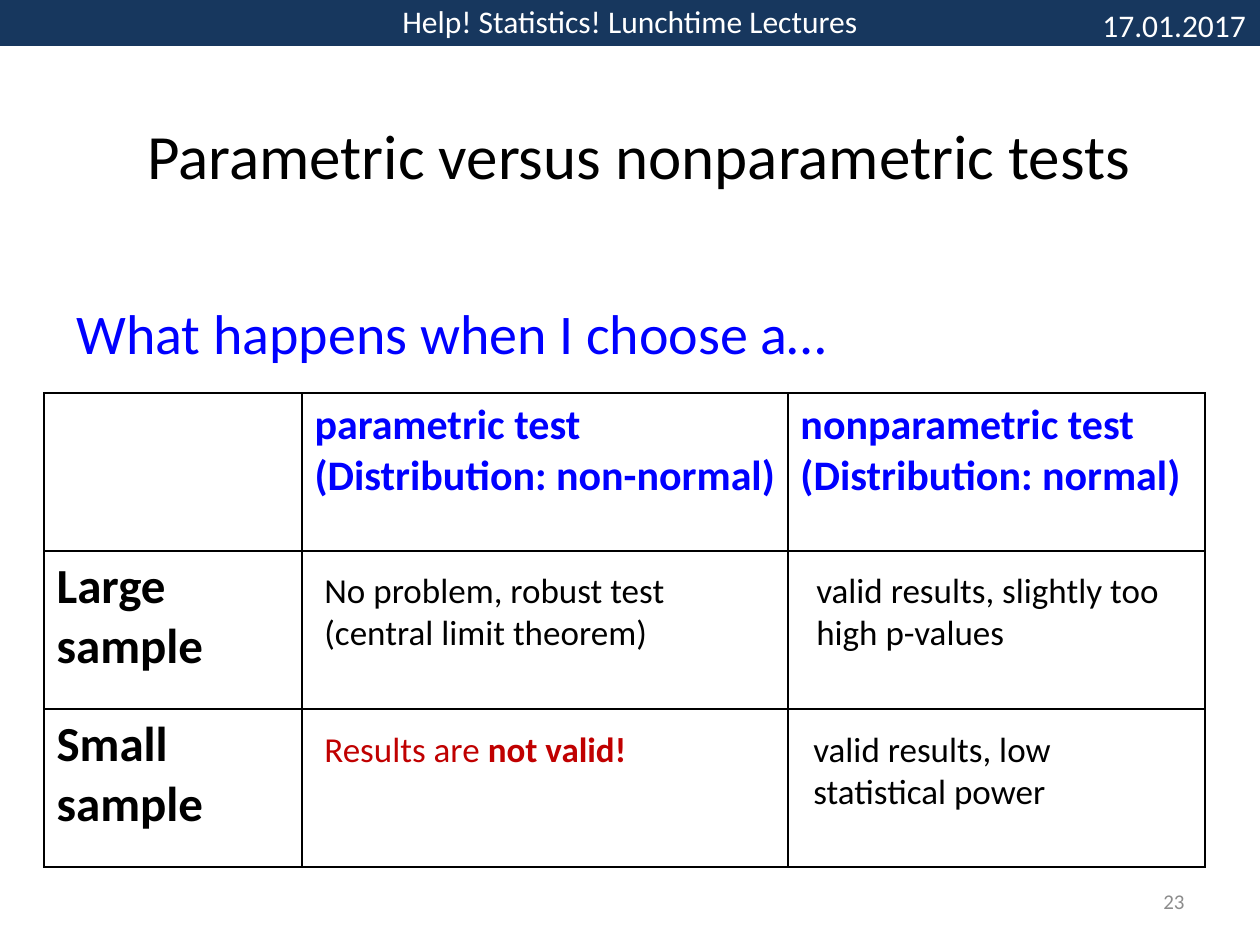
from lxml.etree import SubElement
from pptx import Presentation
from pptx.dml.color import RGBColor
from pptx.enum.shapes import MSO_SHAPE
from pptx.enum.text import MSO_ANCHOR, PP_ALIGN
from pptx.oxml.ns import qn
from pptx.util import Emu, Pt

PX = 914400 // 126
FONT = "Calibri"
BLUE, BLACK, WHITE, RED = "0000FF", "000000", "FFFFFF", "C00000"

TITLE = "Parametric versus nonparametric tests"
HEADER = "Help! Statistics! Lunchtime Lectures"
DATE = "17.01.2017"
QUESTION = "What happens when I choose a…"
PAGE = "23"

COLUMNS = [
    "parametric test (Distribution: non-normal)",
    "nonparametric test (Distribution: normal)",
]
SAMPLES = ["Large sample", "Small sample"]
COL_WIDTHS = [258, 486, 417]
ROW_HEIGHT = 158
TABLE_LEFT, TABLE_TOP = 44, 393

# runs as (text, bold), colour, box
OUTCOMES = [
    ([("No problem, robust test (central limit theorem)", False)], BLACK, (312, 562, 446, 97)),
    ([("valid results, slightly too high p-values", False)], BLACK, (804, 562, 382, 97)),
    ([("valid results, low statistical power", False)], BLACK, (801, 721, 382, 97)),
    ([("Results are ", False), ("not valid!", True)], RED, (312, 721, 446, 55)),
]


def px(*values):
    return [Emu(v * PX) for v in values]


def rgb(color):
    return RGBColor.from_string(color)


def write(tf, runs, size, color, align=PP_ALIGN.LEFT, anchor=MSO_ANCHOR.TOP):
    tf.word_wrap = True
    tf.vertical_anchor = anchor
    p = tf.paragraphs[0]
    p.alignment = align
    style_font(p, size, color)
    for text, bold in runs:
        r = p.add_run()
        r.text = text
        if bold:
            r.font.bold = True


def style_font(p, size, color):
    p.font.name, p.font.size = FONT, Pt(size)
    p.font.color.rgb = rgb(color)


def add_text(slide, runs, box, size, color, **layout):
    sp = slide.shapes.add_textbox(*px(*box))
    write(sp.text_frame, runs, size, color, **layout)
    return sp


def add_bar(slide, text, box, fill, size, color, **layout):
    sp = slide.shapes.add_shape(MSO_SHAPE.RECTANGLE, *px(*box))
    sp.shadow.inherit = False
    sp.fill.solid()
    sp.fill.fore_color.rgb = rgb(fill)
    sp.line.fill.background()
    write(sp.text_frame, [(text, False)], size, color, **layout)


def add_borders(cell):
    tc_pr = cell._tc.get_or_add_tcPr()
    for i, side in enumerate(("lnL", "lnR", "lnT", "lnB")):
        ln = tc_pr.makeelement(qn(f"a:{side}"), {"w": str(Pt(1))})
        fill = SubElement(ln, qn("a:solidFill"))
        SubElement(fill, qn("a:srgbClr"), val=BLACK)
        tc_pr.insert(i, ln)


def add_comparison(slide):
    grid = [["", *COLUMNS]] + [[name, "", ""] for name in SAMPLES]
    box = (TABLE_LEFT, TABLE_TOP, sum(COL_WIDTHS), ROW_HEIGHT * len(grid))
    table = slide.shapes.add_table(len(grid), len(COL_WIDTHS), *px(*box)).table
    table.first_row = table.horz_banding = False
    for column, width in zip(table.columns, px(*COL_WIDTHS)):
        column.width = width
    for r, texts in enumerate(grid):
        table.rows[r].height = px(ROW_HEIGHT)[0]
        size, color = (24, BLUE) if r == 0 else (28, BLACK)
        for c, text in enumerate(texts):
            cell = table.cell(r, c)
            cell.fill.background()
            add_borders(cell)
            if text:
                cell.text = text
                p = cell.text_frame.paragraphs[0]
                style_font(p, size, color)
                p.font.bold = True


def main():
    prs = Presentation()
    prs.slide_width, prs.slide_height = px(1260, 945)
    slide = prs.slides.add_slide(prs.slide_layouts[5])

    add_bar(slide, HEADER, (0, -4, 1260, 50), "17375E", 18, WHITE, align=PP_ALIGN.CENTER)
    date = add_text(slide, [(DATE, False)], (1090, 0, 170, 50), 18, WHITE)
    date.text_frame.word_wrap = False
    add_bar(slide, QUESTION, (64, 292, 1191, 81), WHITE, 32, BLUE)

    title = slide.shapes.title
    title.left, title.top, title.width, title.height = px(72, 76, 1134, 157)
    write(title.text_frame, [(TITLE, False)], 36, BLACK,
          align=PP_ALIGN.CENTER, anchor=MSO_ANCHOR.MIDDLE)

    add_comparison(slide)
    for runs, color, box in OUTCOMES:
        add_text(slide, runs, box, 20, color)
    add_text(slide, [(PAGE, False)], (903, 876, 294, 50), 12, "8C8C8C",
             align=PP_ALIGN.RIGHT, anchor=MSO_ANCHOR.MIDDLE)
    prs.save("out.pptx")


if __name__ == "__main__":
    main()
